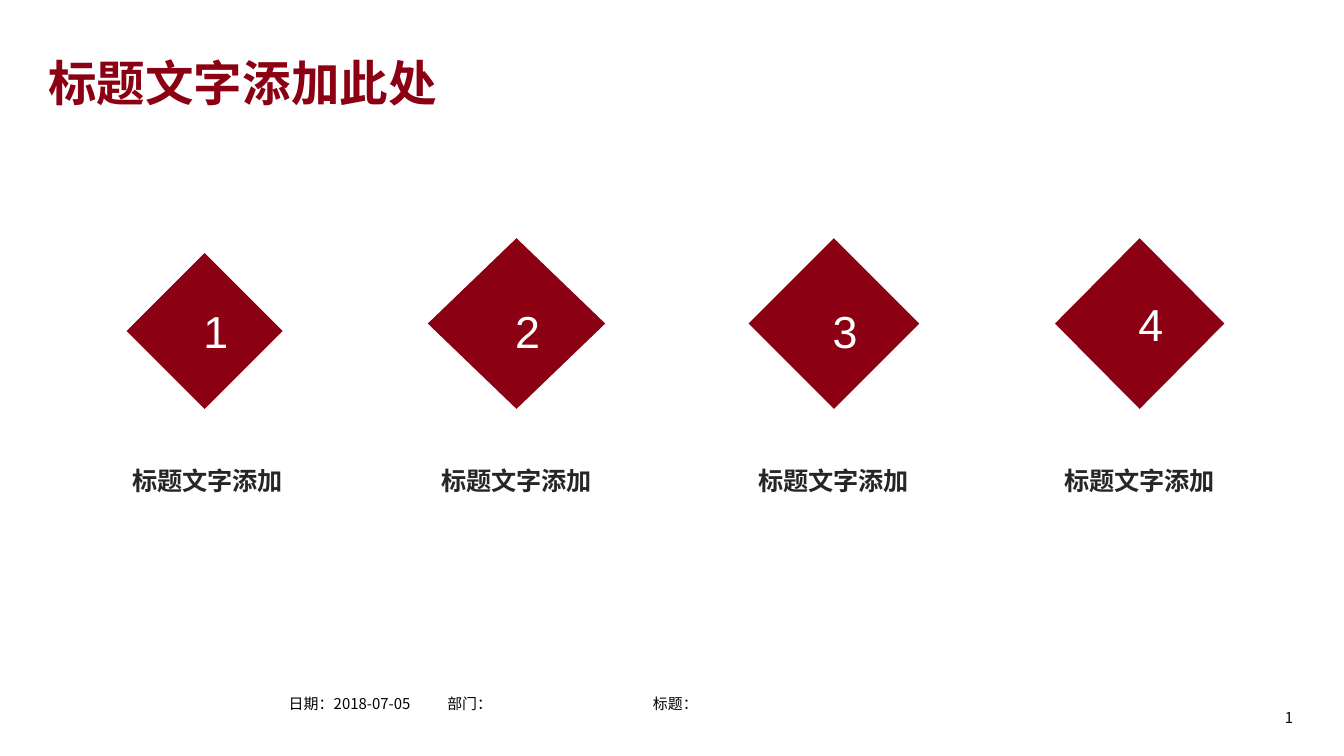
import pptx
import pptx.util
import pptx.dml.color
import pptx.enum.shapes
import pptx.enum.text
import pptx.oxml.ns
from lxml import etree

SANS = "Noto Sans CJK SC"
RED, DARK, BLACK, WHITE = "8B0012", "262626", "000000", "FFFFFF"
ALIGN = pptx.enum.text.PP_ALIGN
ANCHOR = pptx.enum.text.MSO_ANCHOR
DIAMOND = pptx.enum.shapes.MSO_SHAPE.DIAMOND

deck = pptx.Presentation()
deck.slide_width = pptx.util.Inches(10)
deck.slide_height = deck.slide_width * 9 // 16
unit = deck.slide_width / 100  # square grid, 100 columns wide
slide = deck.slides.add_slide(deck.slide_layouts[5])
shapes = slide.shapes


def grid(*cells):
    return [round(cell * unit) for cell in cells]


def write(shape, text, size, color, font=SANS, bold=False,
          align=ALIGN.LEFT, anchor=ANCHOR.TOP, space=None):
    frame = shape.text_frame
    frame.text = text
    frame.word_wrap = True
    frame.auto_size = pptx.enum.text.MSO_AUTO_SIZE.NONE
    frame.vertical_anchor = anchor
    line = frame.paragraphs[0]
    line.alignment = align
    line.line_spacing = space
    run = line.runs[0]
    run.font.size = pptx.util.Pt(size)
    run.font.bold = bold
    run.font.name = font
    run.font.color.rgb = pptx.dml.color.RGBColor.from_string(color)
    # East Asian glyphs take their own typeface
    east = etree.SubElement(run.font._element, pptx.oxml.ns.qn("a:ea"))
    east.set("typeface", font)


# Title
title = shapes.title
title.left, title.top, title.width, title.height = grid(2.6, 2.85, 37, 6)
write(title, "标题文字添加此处", 26, RED, bold=True, space=1.14)

# Four diamonds: centre, width, height, label centre, number top
steps = [
    (15.23, 11.6, 11.6, 15.47, 22.45),
    (38.43, 13.2, 12.7, 38.43, 22.45),
    (62.05, 12.7, 12.7, 62.05, 22.45),
    (84.8, 12.6, 12.7, 84.8, 21.95),
]
base = 30.43  # the row where all diamonds end
side = 4.3
for count, (mid, wide, high, name, top) in enumerate(steps, 1):
    gem = shapes.add_shape(DIAMOND, *grid(mid - wide / 2, base - high, wide, high))
    gem.fill.solid()
    gem.fill.fore_color.rgb = pptx.dml.color.RGBColor.from_string(RED)
    gem.line.fill.background()
    gem.shadow.inherit = False

    label = shapes.add_textbox(*grid(name - 9.1, 33.85, 18.2, 3.6))
    write(label, "标题文字添加", 13.5, DARK, bold=True, align=ALIGN.CENTER, space=1.14)

    digit = shapes.add_shape(DIAMOND, *grid(mid - side / 2, top, side, side))
    digit.fill.background()
    digit.line.fill.background()
    digit.shadow.inherit = False
    write(digit, str(count), 24, WHITE, font="Arial",
          align=ALIGN.CENTER, anchor=ANCHOR.MIDDLE)

# Footer and page number
for left, text in [(20.5, "日期：2018-07-05"), (32.3, "部门："), (47.6, "标题：")]:
    write(shapes.add_textbox(*grid(left, 51.2, 11.4, 2.3)), text, 8, BLACK)
page = shapes.add_textbox(*grid(93.9, 52.2, 3.3, 2.3))
write(page, "1", 8, BLACK, align=ALIGN.RIGHT)

deck.save("out.pptx")
